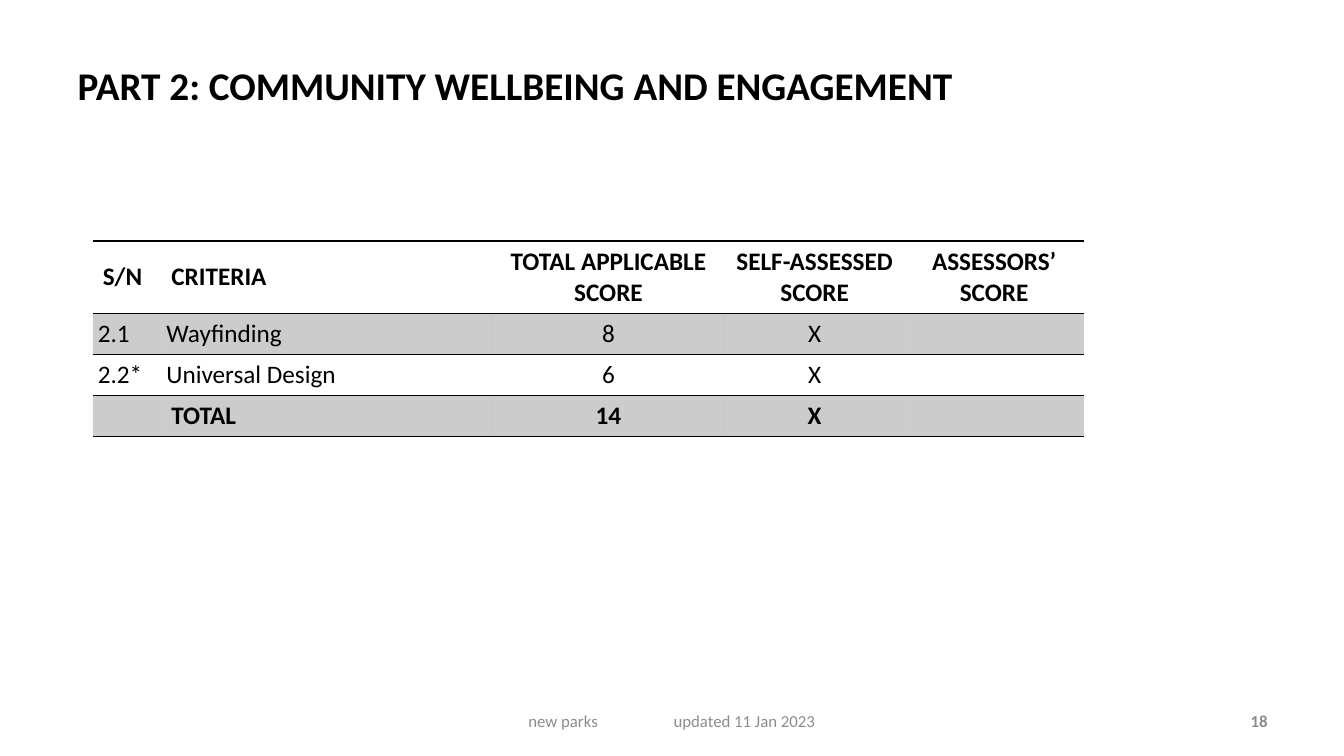
from lxml.etree import SubElement
from pptx import Presentation
from pptx.dml.color import RGBColor
from pptx.enum.text import MSO_ANCHOR, PP_ALIGN
from pptx.oxml import parse_xml
from pptx.oxml.ns import nsdecls, qn
from pptx.util import Inches, Pt

COLORS = {"ink": "000000", "muted": "8C8C8C"}
FONT = "Calibri"
PLAIN_TABLE_STYLE = "{2D5ABB26-0587-4C30-8999-92F81FD0307C}"
COLUMN_WIDTHS = [0.68, 3.28, 2.31, 1.78, 1.78]
ROW_HEIGHTS = [0.72, 0.41, 0.4, 0.4]
SCORES = [
    ["S/N", "CRITERIA", "TOTAL APPLICABLE SCORE", "SELF-ASSESSED SCORE", "ASSESSORS’ SCORE"],
    ["2.1", "Wayfinding", "8", "X", ""],
    ["2.2*", "Universal Design", "6", "X", ""],
    ["", "TOTAL", "14", "X", ""],
]
HEADER, TOTAL = 0, len(SCORES) - 1
SHADED_ROWS = {1, TOTAL}
RULES = {0: ["lnT", "lnB"], 1: ["lnT"], 2: ["lnB"], 3: ["lnT", "lnB"]}


def style_paragraph(paragraph, size, color="ink", bold=False, align=PP_ALIGN.LEFT):
    paragraph.alignment = align
    font = paragraph.font
    font.name = FONT
    font.size = Pt(size)
    font.bold = bold
    font.color.rgb = RGBColor.from_string(COLORS[color])


def place_title(slide, text):
    title = slide.shapes.title
    title.left, title.top = Inches(0.67), Inches(0.3)
    title.width, title.height = Inches(10.36), Inches(1.09)
    title.text_frame.text = text
    title.text_frame.vertical_anchor = MSO_ANCHOR.MIDDLE
    style_paragraph(title.text_frame.paragraphs[0], 28, bold=True)


def add_footer(slide, left, width, text, bold=False, align=PP_ALIGN.LEFT, inset=0.1, tab=None):
    footer = slide.shapes.add_textbox(Inches(left), Inches(6.95), Inches(width), Inches(0.4))
    frame = footer.text_frame
    frame.word_wrap = True
    frame.vertical_anchor = MSO_ANCHOR.MIDDLE
    frame.margin_left = Inches(inset)
    frame.text = text
    paragraph = frame.paragraphs[0]
    if tab:
        properties = paragraph._p.get_or_add_pPr()
        stops = SubElement(properties, qn("a:tabLst"))
        SubElement(stops, qn("a:tab"), pos=str(Inches(tab)), algn="l")
    style_paragraph(paragraph, 12, "muted", bold, align)


def draw_rules(cell, edges):
    properties = cell._tc.get_or_add_tcPr()
    for position, edge in enumerate(edges):
        properties.insert(position, parse_xml(
            f'<a:{edge} {nsdecls("a")} w="{Pt(1)}"><a:solidFill>'
            f'<a:srgbClr val="{COLORS["ink"]}"/></a:solidFill></a:{edge}>'))


def shade(cell):
    cell.fill.solid()
    cell.fill.fore_color.rgb = RGBColor.from_string(COLORS["ink"])
    tint = cell._tc.tcPr.find(".//" + qn("a:srgbClr"))
    SubElement(tint, qn("a:alpha"), val="20000")


def fill_cell(cell, row, column, text):
    is_criterion = HEADER < row < TOTAL and column < 2
    cell.text = text
    cell.vertical_anchor = MSO_ANCHOR.BOTTOM if is_criterion else MSO_ANCHOR.MIDDLE
    if is_criterion:
        cell.margin_left = cell.margin_right = Inches(0.05)
    style_paragraph(cell.text_frame.paragraphs[0], 18, bold=row in (HEADER, TOTAL),
                    align=PP_ALIGN.CENTER if column > 1 else PP_ALIGN.LEFT)
    if row in SHADED_ROWS:
        shade(cell)
    else:
        cell.fill.background()
    draw_rules(cell, RULES[row])


def add_score_table(slide):
    frame = slide.shapes.add_table(
        len(SCORES), len(COLUMN_WIDTHS), Inches(0.92), Inches(2.39),
        Inches(sum(COLUMN_WIDTHS)), Inches(sum(ROW_HEIGHTS)))
    scores = frame.table
    scores.first_row = scores.horz_banding = False
    scores._tbl.tblPr.find(qn("a:tableStyleId")).text = PLAIN_TABLE_STYLE
    for column, width in zip(scores.columns, COLUMN_WIDTHS):
        column.width = Inches(width)
    for row, height in zip(scores.rows, ROW_HEIGHTS):
        row.height = Inches(height)
    for row, texts in enumerate(SCORES):
        for column, text in enumerate(texts):
            fill_cell(scores.cell(row, column), row, column, text)


def main():
    deck = Presentation()
    deck.slide_width, deck.slide_height = Inches(13.33), Inches(7.5)
    slide = deck.slides.add_slide(deck.slide_layouts[5])
    place_title(slide, "PART 2: COMMUNITY WELLBEING AND ENGAGEMENT")
    add_score_table(slide)
    add_footer(slide, 4.56, 4.22, "new parks\tupdated 11 Jan 2023", inset=0.68, tab=1.44)
    add_footer(slide, 9.56, 3.11, "18", bold=True, align=PP_ALIGN.RIGHT)
    deck.save("out.pptx")


if __name__ == "__main__":
    main()
